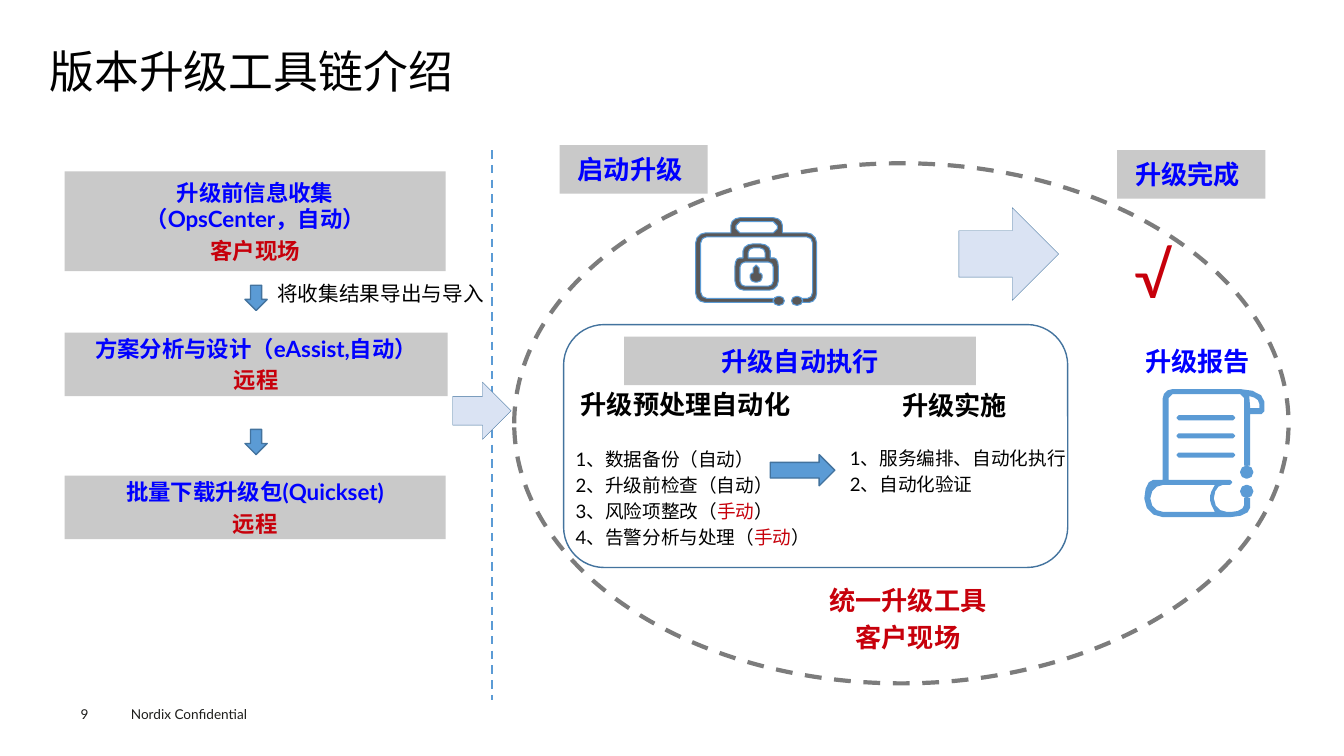
import pptx
import pptx.util
import pptx.dml.color
import pptx.enum.dml
import pptx.enum.shapes
import pptx.enum.text
import pptx.oxml.ns
import lxml.etree

BLACK, BLUE, RED, GREY = "000000", "0000FF", "C7000B", "C9C9C9"
SKY, PALE, EDGE, INK = "5B9BD5", "DAE3F3", "43739E", "1D1D1B"
SHAPE = pptx.enum.shapes.MSO_SHAPE
ALIGN = pptx.enum.text.PP_ALIGN
ANCHOR = pptx.enum.text.MSO_ANCHOR


def px(n):
    return pptx.util.Emu(round(n * 9144))


def rgb(text):
    return pptx.dml.color.RGBColor.from_string(text)


def write(frame, text, size=18.7, color=BLUE, bold=False, center=False,
          middle=True, inset=(18, 9), leading=None):
    frame.word_wrap = True
    frame.vertical_anchor = ANCHOR.MIDDLE if middle else ANCHOR.TOP
    frame.margin_left = frame.margin_right = px(inset[0])
    frame.margin_top = frame.margin_bottom = px(inset[1])
    for row, line in enumerate(text.split("\n")):
        para = frame.add_paragraph() if row else frame.paragraphs[0]
        para.alignment = ALIGN.CENTER if center else ALIGN.LEFT
        para.space_before = pptx.util.Pt(round(size * 0.2, 1) if row else 0)
        if leading:
            para.line_spacing = leading
        for turn, piece in enumerate(line.split("|")):
            for part, words in enumerate(piece.split("\v")):
                if part:
                    para.add_line_break()
                if not words:
                    continue
                run = para.add_run()
                run.text = words
                run.font.name = "Lato"
                run.font.size = pptx.util.Pt(size)
                run.font.bold = bold
                run.font.color.rgb = rgb(RED if turn % 2 else color)


def block(left, top, right, base, r):
    return [(left, top, r), (right, top, r), (right, base, r), (left, base, r)]


def curve(corners):
    points = []
    for i, (x, y, r) in enumerate(corners):
        if not r:
            points.append((px(x), px(y)))
            continue
        ends = []
        for a, b, _ in (corners[i - 1], corners[(i + 1) % len(corners)]):
            far = ((a - x) ** 2 + (b - y) ** 2) ** 0.5
            cut = min(r / far, 0.5)
            ends.append((x + (a - x) * cut, y + (b - y) * cut))
        (ax, ay), (bx, by) = ends
        steps = 1 if r < 5 else 2 if r < 8 else 3
        for step in range(steps + 1):
            t = step / steps
            u, v, w = (1 - t) ** 3, 3 * t * (1 - t), t ** 3
            kx = v * ((1 - t) * (ax + (x - ax) * 0.55) + t * (bx + (x - bx) * 0.55))
            ky = v * ((1 - t) * (ay + (y - ay) * 0.55) + t * (by + (y - by) * 0.55))
            points.append((px(u * ax + kx + w * bx), px(u * ay + ky + w * by)))
    return points


class Page:
    def __init__(self, deck):
        self.slide = deck.slides.add_slide(deck.slide_layouts[5])
        self.shapes = self.slide.shapes

    def paint(self, shape, fill=None, line=None, width=1, dash=False):
        shape.shadow.inherit = False
        if fill:
            shape.fill.solid()
            shape.fill.fore_color.rgb = rgb(fill)
        else:
            shape.fill.background()
        self.stroke(shape.line, line, width, dash)

    def stroke(self, pen, color, width, dash):
        if not color:
            pen.fill.background()
            return
        pen.color.rgb = rgb(color)
        pen.width = pptx.util.Pt(width)
        if dash:
            pen.dash_style = pptx.enum.dml.MSO_LINE.DASH

    def title(self, text, *box):
        hold = self.shapes.title
        hold.left, hold.top, hold.width, hold.height = map(px, box)
        write(hold.text_frame, text, size=32, color=BLACK, middle=False,
              inset=(0, 0), leading=0.9)

    def shape(self, kind, *box, **look):
        shape = self.shapes.add_shape(kind, *map(px, box))
        self.paint(shape, **look)
        return shape

    def panel(self, text, *box, **form):
        write(self.shape(SHAPE.RECTANGLE, *box, fill=GREY).text_frame,
              text, bold=True, **form)

    def label(self, text, *box, **form):
        write(self.shapes.add_textbox(*map(px, box)).text_frame, text, **form)

    def rule(self, *ends, color, width, dash=False):
        line = self.shapes.add_connector(
            pptx.enum.shapes.MSO_CONNECTOR.STRAIGHT, *map(px, ends))
        self.stroke(line.line, color, width, dash)
        lxml.etree.SubElement(line._element.spPr, pptx.oxml.ns.qn("a:effectLst"))

    def icon(self, loops, **look):
        pen = None
        for loop in map(curve, loops):
            if pen is None:
                pen = self.shapes.build_freeform(*loop[0], scale=1.0)
            else:
                pen.move_to(*loop[0])
            pen.add_line_segments(loop[1:], close=True)
        self.paint(pen.convert_to_shape(), **look)


def main():
    deck = pptx.Presentation()
    deck.slide_width, deck.slide_height = px(1333), px(750)
    page = Page(deck)
    page.title("版本升级工具链介绍", 49, 49, 1235, 54)
    page.label("Nordix Confidential", 120, 695, 160, 27, size=9.7, color=INK,
               middle=False, inset=(10, 5))
    page.label("9", 80, 700, 55, 16, size=9.7, color=INK, middle=False, inset=(0, 0))

    steps = [("升级前信息收集\v（OpsCenter，自动）\n|客户现场", 170, 378, 99),
             ("方案分析与设计（eAssist,自动）\n|远程", 330, 380, 63),
             ("批量下载升级包(Quickset)\n|远程", 472, 378, 63)]
    for text, top, wide, high in steps:
        page.panel(text, 64, top, wide, high, size=16, center=True)
    for top in (283, 426):
        page.shape(SHAPE.DOWN_ARROW, 243, top, 22, 25, fill=SKY, line=EDGE)
    page.label("将收集结果导出与导入", 257, 268, 250, 46, size=14.7, color=BLACK)
    page.rule(488, 149, 488, 694, color=SKY, width=1.5, dash=True)

    page.panel("启动升级", 555, 144, 147, 48)
    page.panel("升级完成", 1108, 149, 147, 48)
    page.shape(SHAPE.ROUNDED_RECTANGLE, 559, 322, 500, 241, line=EDGE)
    page.panel("升级自动执行", 619, 334, 349, 48, center=True)
    page.shape(SHAPE.OVAL, 510, 162, 768, 516, line="7C7C7C", width=3, dash=True)
    for box in ((449, 379, 58, 57), (951, 206, 99, 92)):
        page.shape(SHAPE.RIGHT_ARROW, *box, fill=PALE, line=EDGE, width=0.25)
    page.shape(SHAPE.RIGHT_ARROW, 764, 451, 64, 31, fill=SKY, line=EDGE)

    page.label("升级预处理自动化", 558, 377, 252, 48, color=BLACK, bold=True)
    page.label("1、数据备份（自动）\n2、升级前检查（自动）\n3、风险项整改（|手动|）\n"
               "4、告警分析与处理（|手动|）", 553, 442, 274, 104, size=13.3, color=BLACK)
    page.label("升级实施", 877, 378, 153, 48, color=BLACK, bold=True)
    page.label("1、服务编排、自动化执行\n2、自动化验证", 825, 417, 251, 101,
               size=13.3, color=BLACK)
    page.label("统一升级工具\n客户现场", 793, 581, 215, 65, color=RED, bold=True,
               center=True)
    page.label("升级报告", 1118, 334, 145, 48, bold=True)
    page.label("√", 1115, 230, 58, 84, size=44, color=RED, middle=False, inset=(10, 5))

    scroll = [[(1153, 386, 10), (1254, 386, 24), (1254, 411, 3), (1240, 411, 0),
               (1240, 462, 0), (1234, 462, 0), (1234, 391, 4), (1159, 391, 4),
               (1159, 476, 0), (1222, 476, 2), (1222, 481, 2), (1204, 481, 13),
               (1204, 508, 13), (1234, 508, 13), (1234, 494, 0), (1240, 494, 0),
               (1240, 513, 19), (1135, 513, 18), (1135, 476, 18), (1153, 476, 0)],
              [(1141, 481, 13), (1205, 481, 0), (1198, 494, 8), (1205, 508, 0),
               (1141, 508, 13)],
              [(1239, 393, 0), (1249, 396, 6), (1249, 405, 0), (1240, 405, 0)]]
    scroll += [block(1230, top, 1243, top + 13, 6) for top in (462, 481)]
    scroll += [block(1167, top, 1225, top + 5, 2) for top in (412, 430, 449)]
    page.icon(scroll, fill=SKY)

    case = [[(767, 300, 0), (690, 300, 9), (690, 231, 10), (725, 231, 0),
             (725, 216, 9), (776, 216, 9), (776, 231, 0), (810, 231, 10),
             (810, 300, 9), (796, 300, 0), (796, 296, 0), (806, 296, 6),
             (806, 235, 6), (695, 235, 6), (695, 296, 6), (767, 296, 0)],
            block(730, 220, 771, 231, 4),
            [(729, 256, 8), (737, 256, 0), (737, 242, 10), (764, 242, 10),
             (764, 256, 0), (772, 256, 8), (772, 288, 9), (729, 288, 9)],
            block(734, 260, 767, 284, 5),
            [(742, 246, 5), (759, 246, 5), (759, 256, 0), (742, 256, 0)],
            [(747, 263, 3), (753, 263, 3), (753, 271, 0), (756, 271, 2),
             (756, 280, 5), (744, 280, 5), (744, 271, 2), (747, 271, 0)]]
    case += [block(left, 294, left + 11, 303, 5) for left in (767, 785)]
    page.icon(case, fill="595757", line=SKY, width=0.75)
    deck.save("out.pptx")


if __name__ == "__main__":
    main()
